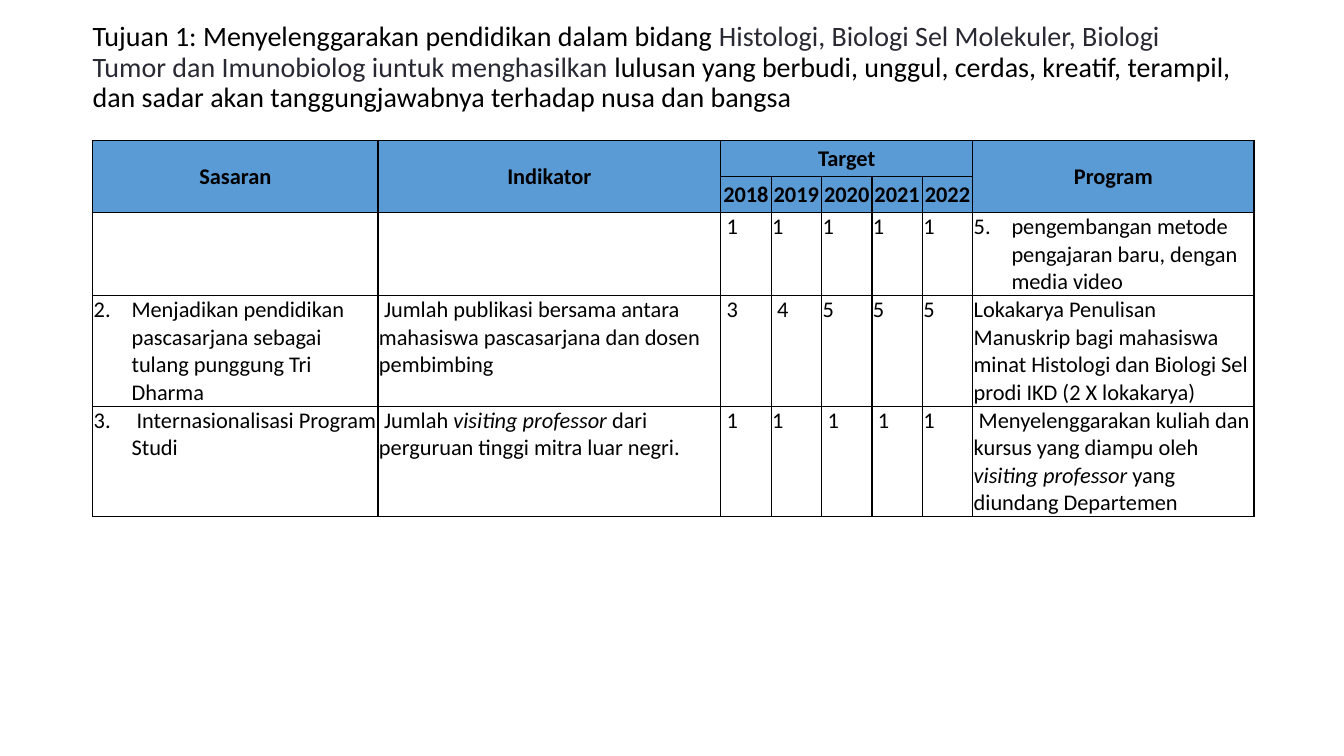
from dataclasses import dataclass

from lxml import etree
from pptx import Presentation
from pptx.dml.color import RGBColor
from pptx.enum import text as t
from pptx.oxml import ns
from pptx.util import Pt

BLACK = RGBColor(0x00, 0x00, 0x00)
SLATE = RGBColor(0x29, 0x29, 0x34)
BLUE = RGBColor(0x5B, 0x9B, 0xD5)
FONT = "Calibri"
INDENT = 27
INSET = 0.72
HEADER_ROWS = 2
FIRST_YEAR = 2018
FIRST_YEAR_COLUMN = 2
PROGRAM_COLUMN = 7
COLUMN_WIDTHS = [203.76, 244.8, *[36] * 5, 200.88]
ROW_HEIGHTS = [25.7, 25.7, 59.3, 79, 79]


@dataclass(frozen=True)
class Run:
    text: str
    color: RGBColor = BLACK
    italic: bool = False


@dataclass(frozen=True)
class Entry:
    runs: tuple[Run, ...] = ()
    number: int | None = None


@dataclass(frozen=True)
class Goal:
    sasaran: Entry
    indikator: Entry
    targets: tuple[str, ...]
    program: Entry


VISITING = Run("visiting professor ", italic=True)

TITLE = (
    Run("Tujuan 1: Menyelenggarakan pendidikan dalam bidang "),
    Run("Histologi, Biologi Sel Molekuler, Biologi Tumor dan Imunobiolog iuntuk menghasilkan ", SLATE),
    Run("lulusan yang berbudi, unggul, cerdas, kreatif, terampil, dan sadar akan "
        "tanggungjawabnya terhadap nusa dan bangsa"),
)

GOALS = [
    Goal(
        Entry(),
        Entry(),
        (" 1", "1 ", "1 ", "1 ", "1 "),
        Entry((Run("pengembangan metode pengajaran baru, dengan media video"),), 5),
    ),
    Goal(
        Entry((Run("Menjadikan pendidikan pascasarjana sebagai tulang punggung Tri Dharma"),), 2),
        Entry((Run(" Jumlah publikasi bersama antara mahasiswa pascasarjana dan dosen pembimbing"),)),
        (" 3", " 4", "5 ", "5 ", "5 "),
        Entry((Run("Lokakarya Penulisan Manuskrip bagi mahasiswa minat Histologi dan "
                   "Biologi Sel prodi IKD (2 X lokakarya)"),)),
    ),
    Goal(
        Entry((Run(" Internasionalisasi Program Studi"),), 3),
        Entry((Run(" Jumlah "), VISITING, Run("dari perguruan tinggi mitra luar negri."))),
        (" 1", "1 ", " 1", " 1", "1 "),
        Entry((Run(" Menyelenggarakan kuliah dan kursus yang diampu oleh "), VISITING,
               Run("yang diundang Departemen"))),
    ),
]


def write_text(frame, runs: tuple[Run, ...], *, size: float = 16, bold: bool = False,
               align=t.PP_ALIGN.LEFT, line_spacing: float | None = None,
               number: int | None = None) -> None:
    paragraph = frame.paragraphs[0]
    paragraph.alignment = align
    if line_spacing:
        paragraph.line_spacing = line_spacing
    if number is not None:
        properties = paragraph._p.get_or_add_pPr()
        properties.set("marL", str(Pt(INDENT)))
        properties.set("indent", str(-Pt(INDENT)))
        etree.SubElement(properties, ns.qn("a:buFont"), typeface="+mj-lt")
        etree.SubElement(properties, ns.qn("a:buAutoNum"), type="arabicPeriod", startAt=str(number))
    for item in runs:
        run = paragraph.add_run()
        run.text = item.text
        run.font.name = FONT
        run.font.size = Pt(size)
        run.font.bold = bold
        run.font.italic = item.italic
        run.font.color.rgb = item.color


def add_borders(cell) -> None:
    properties = cell._tc.get_or_add_tcPr()
    for position, side in enumerate(("lnL", "lnR", "lnT", "lnB")):
        line = etree.Element(ns.qn(f"a:{side}"), w=str(Pt(1)))
        fill = etree.SubElement(line, ns.qn("a:solidFill"))
        etree.SubElement(fill, ns.qn("a:srgbClr"), val=str(BLACK))
        properties.insert(position, line)


def add_title(slide) -> None:
    shape = slide.shapes.add_textbox(Pt(59.04), Pt(23.04), Pt(828), Pt(51.12))
    frame = shape.text_frame
    frame.word_wrap = True
    frame.vertical_anchor = t.MSO_ANCHOR.MIDDLE
    write_text(frame, TITLE, size=20, line_spacing=0.9)


def style_cells(table) -> None:
    for row_index, row in enumerate(table.rows):
        for cell in row.cells:
            cell.margin_left = cell.margin_top = cell.margin_right = Pt(INSET)
            cell.margin_bottom = 0
            if row_index < HEADER_ROWS:
                cell.fill.solid()
                cell.fill.fore_color.rgb = BLUE
                cell.vertical_anchor = t.MSO_ANCHOR.MIDDLE
            else:
                cell.fill.background()
                cell.vertical_anchor = t.MSO_ANCHOR.TOP
            add_borders(cell)


def fill_header(table) -> None:
    last_year_column = PROGRAM_COLUMN - 1
    headings = [
        ("Sasaran", 0, 1, 0),
        ("Indikator", 1, 1, 1),
        ("Target", FIRST_YEAR_COLUMN, 0, last_year_column),
        ("Program", PROGRAM_COLUMN, 1, PROGRAM_COLUMN),
    ]
    for heading, column, last_row, last_column in headings:
        cell = table.cell(0, column)
        cell.merge(table.cell(last_row, last_column))
        write_text(cell.text_frame, (Run(heading),), bold=True, align=t.PP_ALIGN.CENTER)
    for offset in range(PROGRAM_COLUMN - FIRST_YEAR_COLUMN):
        cell = table.cell(1, FIRST_YEAR_COLUMN + offset)
        write_text(cell.text_frame, (Run(str(FIRST_YEAR + offset)),), bold=True,
                   align=t.PP_ALIGN.CENTER)


def fill_goals(table) -> None:
    for row, goal in enumerate(GOALS, start=HEADER_ROWS):
        targets = [Entry((Run(target),)) for target in goal.targets]
        for column, entry in enumerate([goal.sasaran, goal.indikator, *targets, goal.program]):
            write_text(table.cell(row, column).text_frame, entry.runs, number=entry.number)


def add_goal_table(slide) -> None:
    table = slide.shapes.add_table(
        len(ROW_HEIGHTS), len(COLUMN_WIDTHS), Pt(66.24), Pt(100.5),
        Pt(sum(COLUMN_WIDTHS)), Pt(sum(ROW_HEIGHTS)),
    ).table
    table.first_row = False
    table.horz_banding = False
    for column, width in zip(table.columns, COLUMN_WIDTHS):
        column.width = Pt(width)
    for row, height in zip(table.rows, ROW_HEIGHTS):
        row.height = Pt(height)
    style_cells(table)
    fill_header(table)
    fill_goals(table)


def main() -> None:
    presentation = Presentation()
    presentation.slide_width = Pt(960)
    presentation.slide_height = Pt(540)
    slide = presentation.slides.add_slide(presentation.slide_layouts[6])
    add_title(slide)
    add_goal_table(slide)
    presentation.save("out.pptx")


if __name__ == "__main__":
    main()
